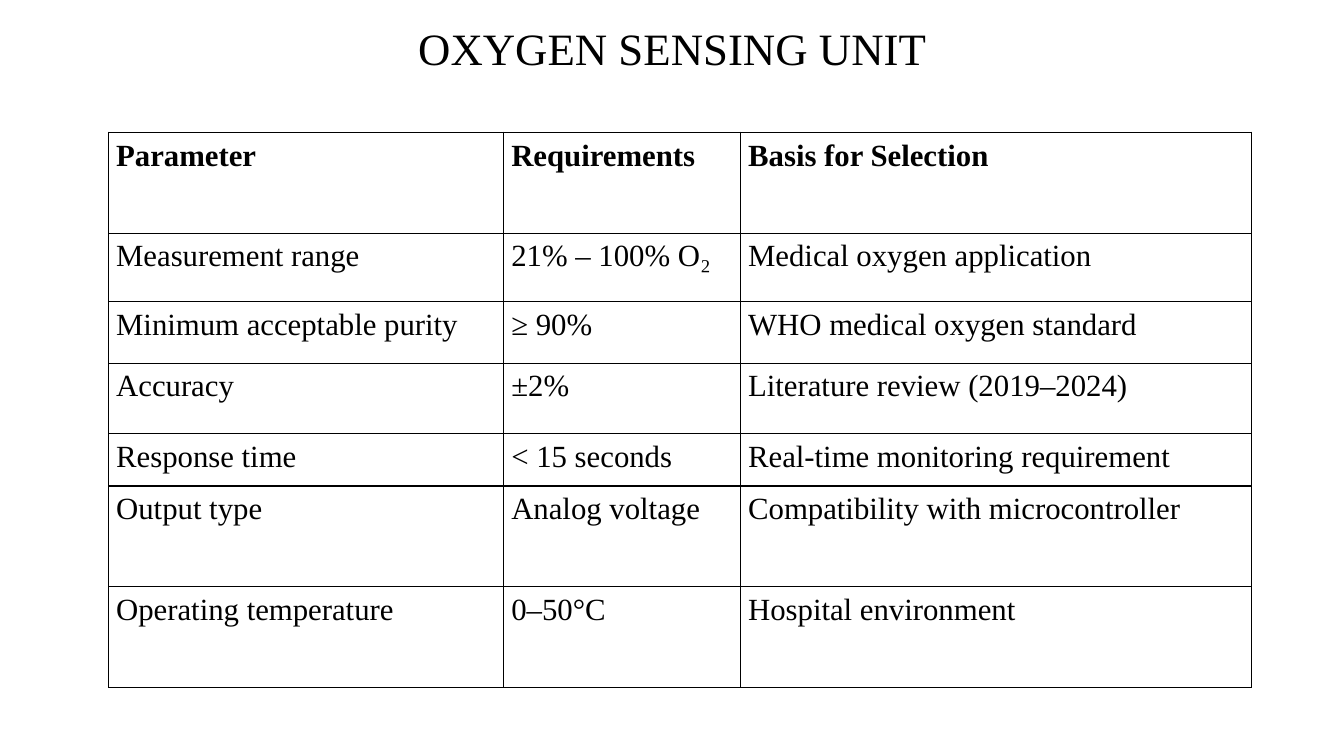
from dataclasses import dataclass

from lxml import etree
from pptx import Presentation
from pptx.dml import color
from pptx.enum import text as enum
from pptx.oxml import ns
from pptx.util import Pt


@dataclass(frozen=True)
class Theme:
    font: str = "Times New Roman"
    ink: str = "000000"
    paper: str = "FFFFFF"
    title: float = 32
    body: float = 22
    rule: float = 1


@dataclass(frozen=True)
class Row:
    height: float
    cells: tuple[str, str, str]
    bold: bool = False


THEME = Theme()
WIDTHS = (282.24, 169.2, 365.04)
ROWS = (
    Row(72, ("Parameter", "Requirements", "Basis for Selection"), bold=True),
    Row(48.96, ("Measurement range", "21% – 100% O₂", "Medical oxygen application")),
    Row(43.92, ("Minimum acceptable purity", "≥ 90%", "WHO medical oxygen standard")),
    Row(50.4, ("Accuracy", "±2%", "Literature review (2019–2024)")),
    Row(37.44, ("Response time", "< 15 seconds", "Real-time monitoring requirement")),
    Row(72, ("Output type", "Analog voltage", "Compatibility with microcontroller")),
    Row(72, ("Operating temperature", "0–50°C", "Hospital environment")),
)


def write(frame, words: str, *, size: float, bold: bool = False,
          align=enum.PP_ALIGN.LEFT, line: float = 1, after: float = 0) -> None:
    """Fill a text frame with one formatted paragraph."""
    para = frame.paragraphs[0]
    para.alignment = align
    para.line_spacing = line
    para.space_before = Pt(0)
    para.space_after = Pt(after)
    run = para.add_run()
    run.text = words
    run.font.name = THEME.font
    run.font.size = Pt(size)
    run.font.bold = bold
    run.font.color.rgb = color.RGBColor.from_string(THEME.ink)


def border(cell) -> None:
    """Rule all four sides of a cell."""
    props = cell._tc.get_or_add_tcPr()
    for side in ("lnL", "lnR", "lnT", "lnB"):
        edge = etree.SubElement(props, ns.qn(f"a:{side}"), w=str(Pt(THEME.rule)))
        fill = etree.SubElement(edge, ns.qn("a:solidFill"))
        etree.SubElement(fill, ns.qn("a:srgbClr"), val=THEME.ink)


def draw_title(slide, words: str) -> None:
    title = slide.shapes.title
    title.left, title.top = Pt(66.24), Pt(0)
    title.width, title.height = Pt(828), Pt(72.72)
    frame = title.text_frame
    frame.word_wrap = True
    frame.auto_size = enum.MSO_AUTO_SIZE.NONE
    frame.vertical_anchor = enum.MSO_ANCHOR.MIDDLE
    write(frame, words, size=THEME.title, align=enum.PP_ALIGN.CENTER, line=0.9)


def draw_cell(cell, words: str, bold: bool) -> None:
    cell.margin_left, cell.margin_right = Pt(5.4), Pt(5.4)
    cell.margin_top, cell.margin_bottom = Pt(2.9), Pt(0)
    border(cell)
    cell.fill.background()
    write(cell.text_frame, words, size=THEME.body, bold=bold, line=1.07, after=10.8)


def draw_table(slide, rows: tuple[Row, ...], widths: tuple[float, ...]) -> None:
    high = sum(row.height for row in rows)
    table = slide.shapes.add_table(len(rows), len(widths), Pt(77.6), Pt(94.5),
                                   Pt(sum(widths)), Pt(high)).table
    table.first_row = table.horz_banding = False
    for col, width in zip(table.columns, widths):
        col.width = Pt(width)
    for line, row in zip(table.rows, rows):
        line.height = Pt(row.height)
        for cell, words in zip(line.cells, row.cells):
            draw_cell(cell, words, row.bold)


def main() -> None:
    # Page
    deck = Presentation()
    deck.slide_width, deck.slide_height = Pt(960), Pt(540)
    slide = deck.slides.add_slide(deck.slide_layouts[5])
    back = slide.background.fill
    back.solid()
    back.fore_color.rgb = color.RGBColor.from_string(THEME.paper)

    # Title and sensor requirements
    draw_title(slide, "OXYGEN SENSING UNIT")
    draw_table(slide, ROWS, WIDTHS)
    deck.save("out.pptx")


if __name__ == "__main__":
    main()
